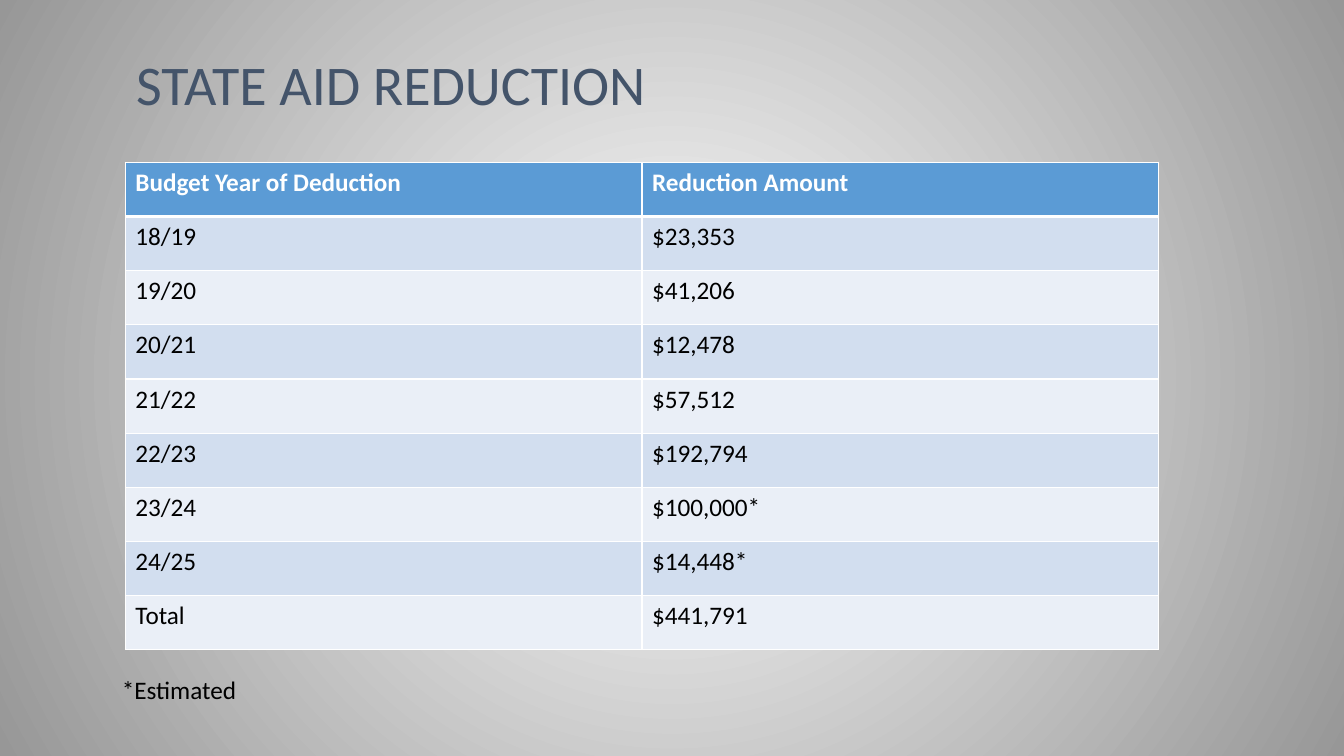
from lxml import etree
from pptx import Presentation
from pptx import util as u
from pptx.dml import color
from pptx.enum import text
from pptx.oxml import ns

FONT = "Calibri"
COLORS = {
    "white": "FFFFFF",
    "edge": "979797",
    "title": "44546A",
    "header": "5B9BD5",
    "band_dark": "D2DEEF",
    "band_light": "EAEFF7",
    "ink": "000000",
}
REDUCTIONS = [
    ("Budget Year of Deduction", "Reduction Amount"),
    ("18/19", "$23,353"),
    ("19/20", "$41,206"),
    ("20/21", "$12,478"),
    ("21/22", "$57,512"),
    ("22/23", "$192,794"),
    ("23/24", "$100,000*"),
    ("24/25", "$14,448*"),
    ("Total", "$441,791"),
]


def rgb(name):
    return color.RGBColor.from_string(COLORS[name])


def write(text_frame, words, size, color_name, bold=False):
    text_frame.text = words
    font = text_frame.paragraphs[0].runs[0].font
    font.name, font.size, font.bold = FONT, u.Pt(size), bold
    font.color.rgb = rgb(color_name)


def paint_background(slide):
    """Radial gradient, light in the middle and grey at the edges."""
    fill = slide.background.fill
    fill.gradient()
    for stop, name, position in zip(fill.gradient_stops, ("white", "edge"), (0, 1)):
        stop.color.rgb = rgb(name)
        stop.position = position
    linear = slide.element.find(".//" + ns.qn("a:lin"))
    gradient = linear.getparent()
    gradient.remove(linear)
    radial = etree.SubElement(gradient, ns.qn("a:path"), path="circle")
    etree.SubElement(radial, ns.qn("a:fillToRect"),
                     dict.fromkeys("ltrb", "50000"))


def add_text(slide, box, words, size, color_name, anchor, line_spacing=1.0):
    shape = slide.shapes.add_textbox(*map(u.Cm, box))
    text_frame = shape.text_frame
    text_frame.word_wrap = True
    text_frame.vertical_anchor = anchor
    write(text_frame, words, size, color_name)
    text_frame.paragraphs[0].line_spacing = line_spacing


def set_borders(cell, widths):
    """Draw white borders; widths maps each side to points."""
    properties = cell._tc.get_or_add_tcPr()
    for index, (side, width) in enumerate(widths.items()):
        line = etree.Element(ns.qn("a:ln" + side), w=str(u.Pt(width)))
        solid = etree.SubElement(line, ns.qn("a:solidFill"))
        etree.SubElement(solid, ns.qn("a:srgbClr"), val=COLORS["white"])
        properties.insert(index, line)


def add_reduction_table(slide, box, rows):
    table = slide.shapes.add_table(
        len(rows), len(rows[0]), *map(u.Cm, box)).table
    for row_index, row in enumerate(rows):
        is_header = row_index == 0
        band = "band_dark" if row_index % 2 else "band_light"
        for column_index, words in enumerate(row):
            cell = table.cell(row_index, column_index)
            cell.fill.solid()
            cell.fill.fore_color.rgb = rgb("header" if is_header else band)
            write(cell.text_frame, words, 18,
                  "white" if is_header else "ink", is_header)
            # The rule under the header is heavier
            set_borders(cell, {"L": 1, "R": 1,
                               "T": 3 if row_index == 1 else 1,
                               "B": 3 if is_header else 1})


def build_slide(presentation):
    slide = presentation.slides.add_slide(presentation.slide_layouts[6])
    paint_background(slide)
    # Title
    add_text(slide, (3.18, 0.71, 27.51, 2.39), "STATE AID REDUCTION",
             40, "title", text.MSO_ANCHOR.BOTTOM, 0.9)
    # Reductions by year
    add_reduction_table(slide, (3.16, 4.09, 26.04, 12.29), REDUCTIONS)
    # Footnote
    add_text(slide, (2.82, 16.87, 7.44, 1.02), "*Estimated",
             18, "ink", text.MSO_ANCHOR.TOP)


def main():
    presentation = Presentation()
    presentation.slide_width = u.Cm(33.87)
    presentation.slide_height = u.Cm(19.05)
    build_slide(presentation)
    presentation.save("out.pptx")


if __name__ == "__main__":
    main()
